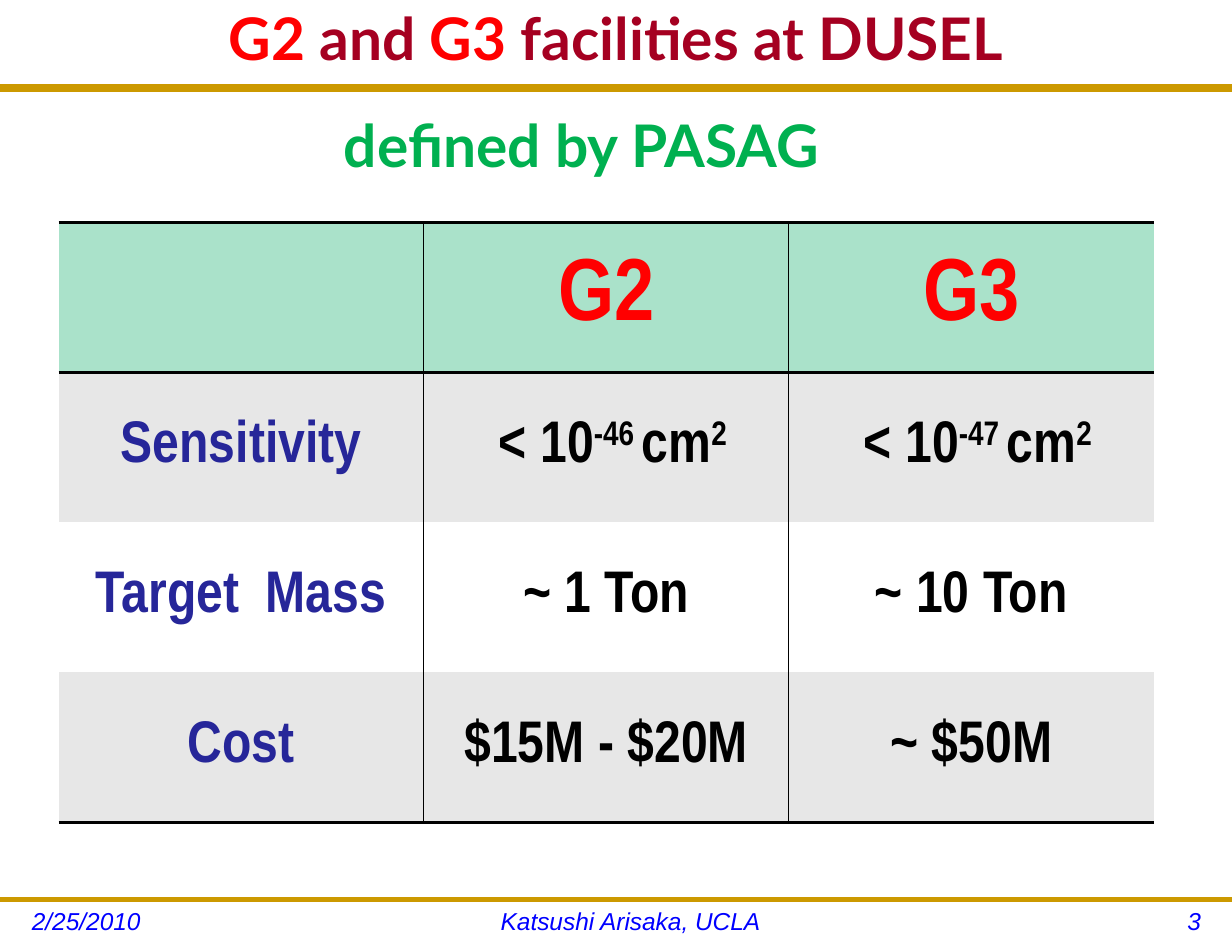
from lxml import etree
from pptx import Presentation
from pptx import util as u
from pptx.dml.color import RGBColor
from pptx.enum import shapes, text
from pptx.oxml import ns

Pt = u.Pt
GOLD = RGBColor(0xCC, 0x99, 0x00)
RED = RGBColor(0xFF, 0x00, 0x00)
MAROON = RGBColor(0xA5, 0x00, 0x21)
GREEN = RGBColor(0x00, 0xB0, 0x50)
BLUE = RGBColor(0x00, 0x00, 0xFF)
NAVY = RGBColor(0x26, 0x26, 0x99)
BLACK = RGBColor(0x00, 0x00, 0x00)
WHITE = RGBColor(0xFF, 0xFF, 0xFF)
MINT = RGBColor(0xAA, 0xE2, 0xCA)
GREY = RGBColor(0xE7, 0xE7, 0xE7)
LEFT, CENTER, RIGHT = text.PP_ALIGN.LEFT, text.PP_ALIGN.CENTER, text.PP_ALIGN.RIGHT
TOP, MIDDLE = text.MSO_ANCHOR.TOP, text.MSO_ANCHOR.MIDDLE


def add_run(p, content, font="Arial", size=15, color=BLACK, bold=False, italic=False, raised=False):
    r = p.add_run()
    r.text = content
    f = r.font
    f.name, f.size, f.bold, f.italic = font, Pt(size), bold, italic
    f.color.rgb = color
    if raised:
        r._r.get_or_add_rPr().set("baseline", "30000")


def add_border(cell, side, width):
    ln = etree.SubElement(cell._tc.get_or_add_tcPr(), ns.qn(f"a:ln{side}"))
    if not width:
        etree.SubElement(ln, ns.qn("a:noFill"))
        return
    ln.set("w", str(Pt(width)))
    fill = etree.SubElement(ln, ns.qn("a:solidFill"))
    etree.SubElement(fill, ns.qn("a:srgbClr")).set("val", str(BLACK))


class Deck:
    def __init__(self, width, height):
        self.prs = Presentation()
        self.prs.slide_width, self.prs.slide_height = Pt(width), Pt(height)
        self.s = self.prs.slides.add_slide(self.prs.slide_layouts[6])

    def rule(self, y, width):
        line = self.s.shapes.add_connector(
            shapes.MSO_CONNECTOR.STRAIGHT, 0, Pt(y), self.prs.slide_width, Pt(y))
        line.line.color.rgb = GOLD
        line.line.width = Pt(width)
        etree.SubElement(line._element.spPr, ns.qn("a:effectLst"))

    def label(self, box, runs, align=LEFT, anchor=TOP, spacing=None, wrap=True, **style):
        tf = self.s.shapes.add_textbox(*map(Pt, box)).text_frame
        tf.word_wrap = wrap
        tf.vertical_anchor = anchor
        p = tf.paragraphs[0]
        p.alignment = align
        p.line_spacing = spacing
        for content, color in runs:
            add_run(p, content, color=color, **style)

    def table(self, box, rows):
        n_rows, n_cols = len(rows), len(rows[0])
        table = self.s.shapes.add_table(n_rows, n_cols, *map(Pt, box)).table
        table.first_row = table.horz_banding = False
        for i, row in enumerate(rows):
            for j, runs in enumerate(row):
                cell = table.cell(i, j)
                cell.vertical_anchor = MIDDLE
                add_border(cell, "L", 1 if j else 0)
                add_border(cell, "R", 1 if j < n_cols - 1 else 0)
                add_border(cell, "T", 2 if i < 2 else 0)
                add_border(cell, "B", 2 if i in (0, n_rows - 1) else 0)
                cell.fill.solid()
                cell.fill.fore_color.rgb = MINT if i == 0 else GREY if i % 2 else WHITE
                p = cell.text_frame.paragraphs[0]
                p.alignment = CENTER
                color = RED if i == 0 else BLACK if j else NAVY
                for k, content in enumerate(runs):
                    add_run(p, content, font="Arial Narrow", size=36 if i else 54,
                            color=color, bold=True, raised=k % 2 == 1)


def main():
    deck = Deck(756, 576)
    deck.rule(54, 4.5)
    deck.rule(552, 3)
    heading = dict(font="Lato", size=36, bold=True)
    deck.label((12, 0, 732, 54),
               [("G2 ", RED), ("and", MAROON), (" G3 ", RED), ("facilities at DUSEL", MAROON)],
               align=CENTER, anchor=MIDDLE, spacing=0.8, **heading)
    for left, width, content, align in [(12.5, 150, "2/25/2010", LEFT),
                                        (168, 438, "Katsushi Arisaka, UCLA", CENTER),
                                        (612, 132, "3", RIGHT)]:
        deck.label((left, 552.5, width, 23.5), [(content, BLUE)], align=align, italic=True)
    deck.table((36, 136.5, 672, 368), [
        [[], ["G2"], ["G3"]],
        [["Sensitivity"], [" < 10", "-46 ", "cm", "2"], [" < 10", "-47 ", "cm", "2"]],
        [["Target  Mass"], ["~ 1 Ton"], ["~ 10 Ton"]],
        [["Cost"], ["$15M - $20M"], ["~ $50M"]],
    ])
    deck.label((204, 63.5, 340.5, 51), [("defined by PASAG", GREEN)], wrap=False, **heading)
    deck.prs.save("out.pptx")


if __name__ == "__main__":
    main()
